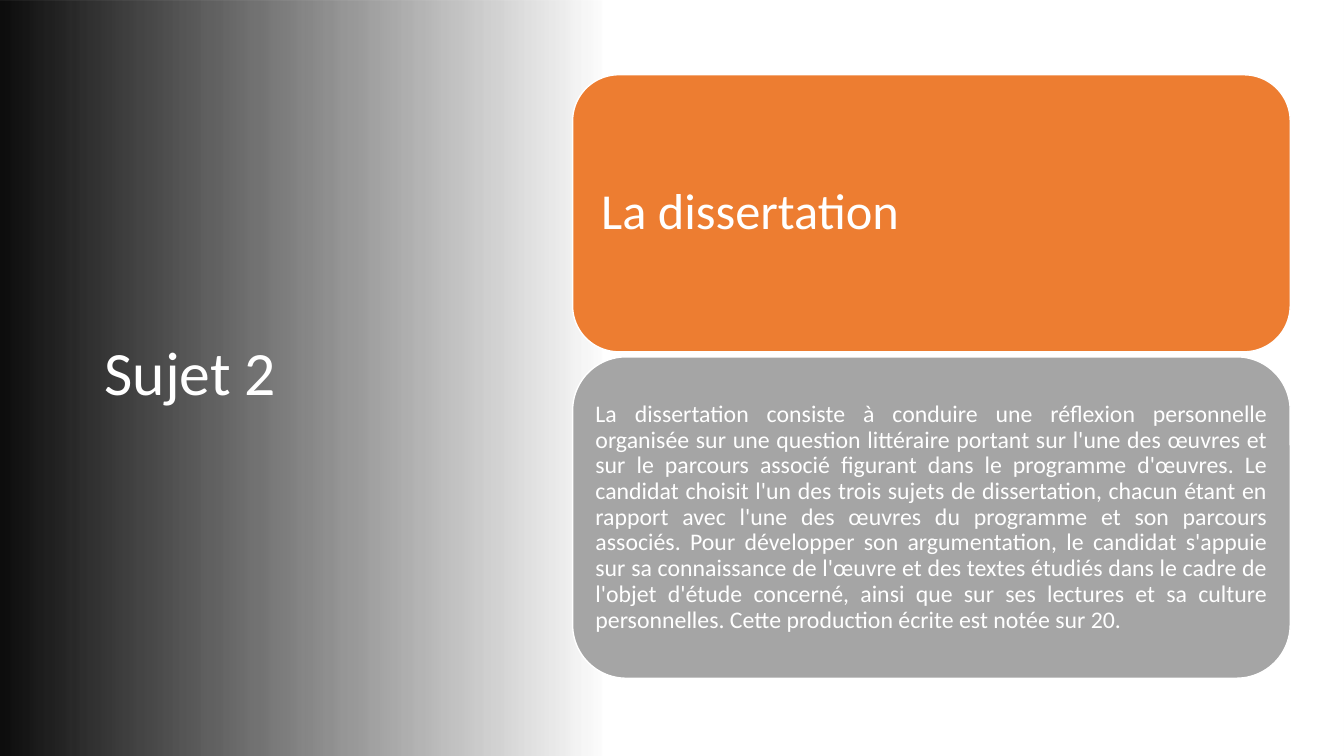
import pptx
import pptx.dml.color
import pptx.enum.shapes
import pptx.enum.text
import pptx.util
import lxml.etree

Pt = pptx.util.Pt
RGB = pptx.dml.color.RGBColor.from_string
ALIGN = pptx.enum.text.PP_ALIGN
SHAPE = pptx.enum.shapes.MSO_SHAPE

TITLE = "Sujet 2"
CARDS = [
    {
        "text": "La dissertation",
        "role": "heading",
        "fill": "orange",
        "height": 197.9,
        "inset": 10.8,
        "align": ALIGN.LEFT,
    },
    {
        "text": (
            "La dissertation consiste à conduire une réflexion personnelle organisée "
            "sur une question littéraire portant sur l'une des œuvres et sur le parcours "
            "associé figurant dans le programme d'œuvres. Le candidat choisit l'un des "
            "trois sujets de dissertation, chacun étant en rapport avec l'une des œuvres "
            "du programme et son parcours associés. Pour développer son argumentation, "
            "le candidat s'appuie sur sa connaissance de l'œuvre et des textes étudiés "
            "dans le cadre de l'objet d'étude concerné, ainsi que sur ses lectures et sa "
            "culture personnelles. Cette production écrite est notée sur 20."
        ),
        "role": "body",
        "fill": "grey",
        "height": 229.6,
        "inset": 5.1,
        "align": ALIGN.JUSTIFY,
    },
]

THEME = {
    "font": "Calibri",
    "colours": {"white": "FFFFFF", "black": "0D0D0D", "orange": "ED7D31", "grey": "A5A5A5"},
    "sizes": {"title": 44, "heading": 36, "body": 17},
}
WIDTH, HEIGHT = 960, 540
CARD_LEFT, CARD_TOP, CARD_WIDTH, CARD_GAP = 409, 53.4, 512.6, 3.6
FADE_END = 0.45


def colour(name):
    return RGB(THEME["colours"][name])


def write(holder, text, role, align=ALIGN.LEFT, inset=(7.2, 3.6)):
    frame = holder.text_frame
    frame.word_wrap = True
    frame.vertical_anchor = pptx.enum.text.MSO_ANCHOR.MIDDLE
    frame.margin_left = frame.margin_right = Pt(inset[0])
    frame.margin_top = frame.margin_bottom = Pt(inset[1])
    paragraph = frame.paragraphs[0]
    paragraph.alignment = align
    paragraph.line_spacing = 0.9
    run = paragraph.add_run()
    run.text = text
    run.font.name = THEME["font"]
    run.font.size = Pt(THEME["sizes"][role])
    run.font.color.rgb = colour("white")


def add_fade(slide):
    fade = slide.shapes.add_shape(SHAPE.RECTANGLE, 0, 0, Pt(WIDTH), Pt(HEIGHT))
    fade.shadow.inherit = False
    fade.line.fill.background()
    fade.fill.gradient()
    fade.fill.gradient_angle = 0
    for stop, position in zip(fade.fill.gradient_stops, (0, FADE_END)):
        stop.position = position
        stop.color.rgb = colour("black")
    tint = fade.fill._fill._gradFill.findall(".//" + pptx.oxml.ns.qn("a:srgbClr"))[-1]
    lxml.etree.SubElement(tint, pptx.oxml.ns.qn("a:alpha"), val="0")


def add_card(slide, card, top):
    panel = slide.shapes.add_shape(
        SHAPE.ROUNDED_RECTANGLE, Pt(CARD_LEFT), Pt(top), Pt(CARD_WIDTH), Pt(card["height"])
    )
    panel.shadow.inherit = False
    panel.fill.solid()
    panel.fill.fore_color.rgb = colour(card["fill"])
    panel.line.color.rgb = colour("white")
    panel.line.width = Pt(1)
    write(panel, card["text"], card["role"], align=card["align"], inset=(card["inset"],) * 2)


def main():
    deck = pptx.Presentation()
    deck.slide_width, deck.slide_height = Pt(WIDTH), Pt(HEIGHT)
    slide = deck.slides.add_slide(deck.slide_layouts[6])
    add_fade(slide)
    write(slide.shapes.add_textbox(Pt(67.7), Pt(80), Pt(269), Pt(377)), TITLE, "title")
    top = CARD_TOP
    for card in CARDS:
        add_card(slide, card, top)
        top += card["height"] + CARD_GAP
    deck.save("out.pptx")


if __name__ == "__main__":
    main()
